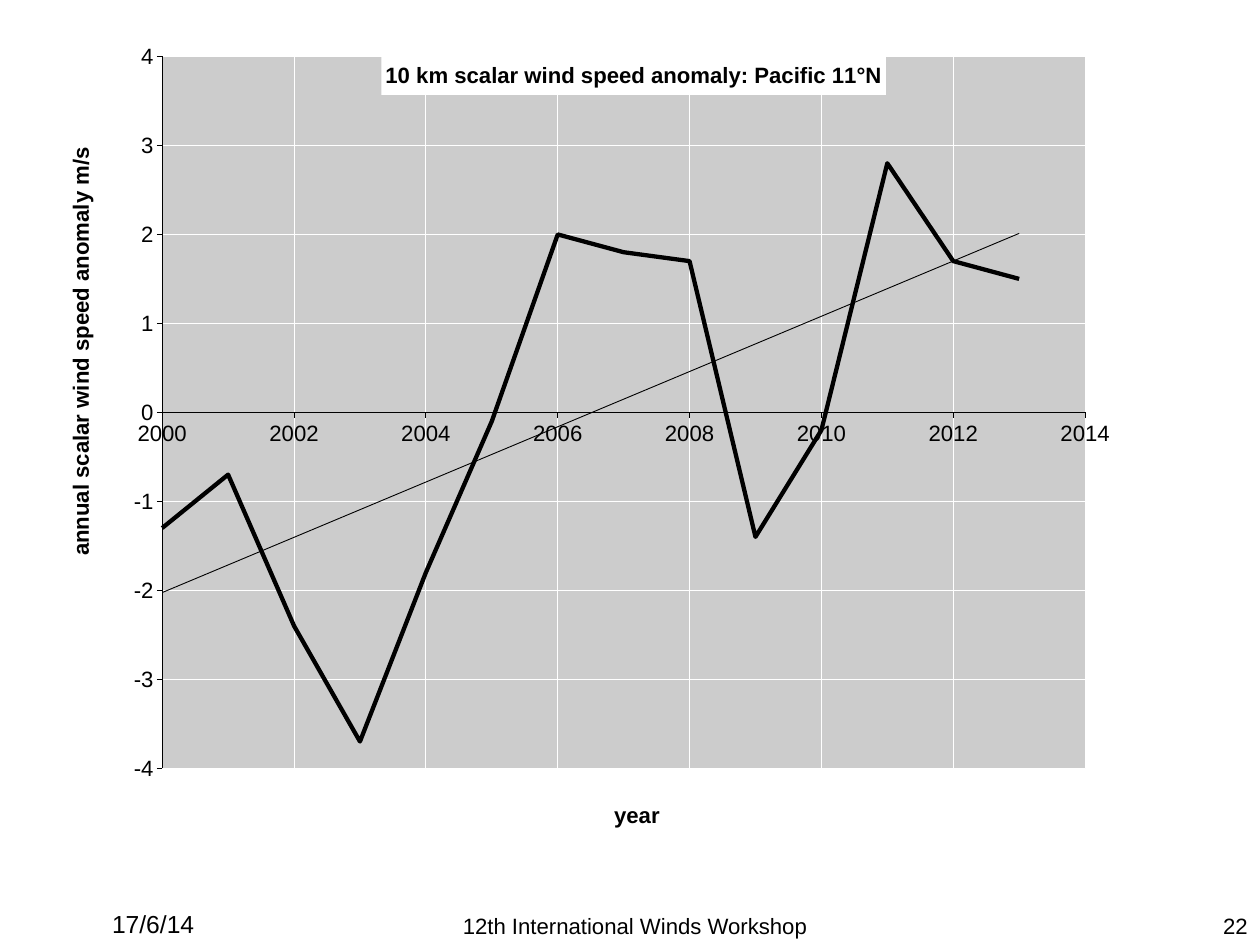
from collections import namedtuple

from lxml.etree import SubElement
from pptx import Presentation
from pptx.chart.data import XyChartData
from pptx.dml.color import RGBColor
from pptx.enum.chart import XL_CHART_TYPE, XL_TICK_LABEL_POSITION, XL_TICK_MARK
from pptx.enum.text import MSO_ANCHOR, PP_ALIGN
from pptx.oxml import parse_xml
from pptx.oxml.ns import nsdecls, qn
from pptx.util import Pt

Theme = namedtuple("Theme", "font ink paper panel date_size text_size thin thick")
theme = Theme("Arial", RGBColor(0, 0, 0), RGBColor(255, 255, 255), RGBColor(204, 204, 204),
              Pt(20), Pt(18), Pt(0.75), Pt(3.5))


def style_font(font, size, bold=False):
    font.name = theme.font
    font.size = size
    font.bold = bold
    font.color.rgb = theme.ink


def set_layout(element, **settings):
    layout = element.find(qn("c:layout"))
    if layout is None:
        layout = parse_xml(f"<c:layout {nsdecls('c')}/>")
        element.insert(0, layout)
    manual = SubElement(layout, qn("c:manualLayout"))
    for name, value in settings.items():
        SubElement(manual, qn(f"c:{name}")).set("val", str(value))


deck = Presentation()
deck.slide_width = Pt(1024)
deck.slide_height = Pt(768)
page = deck.slides.add_slide(deck.slide_layouts[6])

footers = [
    ("17/6/14", 18, 213, theme.date_size, PP_ALIGN.CENTER),
    ("12th International Winds Workshop", 354, 324, theme.text_size, PP_ALIGN.CENTER),
    ("22", 811, 213, theme.text_size, PP_ALIGN.RIGHT),
]
for text, left, width, size, alignment in footers:
    box = page.shapes.add_textbox(Pt(left), Pt(717), Pt(width), Pt(51))
    frame = box.text_frame
    frame.word_wrap = True
    frame.vertical_anchor = MSO_ANCHOR.BOTTOM
    frame.margin_left = frame.margin_right = Pt(10)
    frame.margin_top = frame.margin_bottom = Pt(5)
    frame.text = text
    para = frame.paragraphs[0]
    para.alignment = alignment
    style_font(para.runs[0].font, size)

anomalies = [-1.3, -0.7, -2.4, -3.7, -1.8, -0.1, 2, 1.8, 1.7, -1.4, -0.2, 2.8, 1.7, 1.5]
wind_data = XyChartData()
wind_series = wind_data.add_series("Series 1")
for year, anomaly in enumerate(anomalies, start=2000):
    wind_series.add_data_point(year, anomaly)

chart = page.shapes.add_chart(XL_CHART_TYPE.XY_SCATTER_SMOOTH_NO_MARKERS,
                              Pt(36), Pt(21), Pt(958), Pt(692), wind_data).chart
chart.has_legend = False
style_font(chart.font, theme.text_size)
chart.plots[0].vary_by_categories = False

series = chart.plots[0].series[0]
series.smooth = True
series.format.line.color.rgb = theme.ink
series.format.line.width = theme.thick
trend = parse_xml(
    f'<c:trendline {nsdecls("c", "a")}><c:spPr><a:ln w="{theme.thin}"><a:solidFill>'
    f'<a:srgbClr val="{theme.ink}"/></a:solidFill></a:ln></c:spPr>'
    '<c:trendlineType val="linear"/><c:dispRSqr val="0"/><c:dispEq val="0"/></c:trendline>')
series._element.find(qn("c:xVal")).addprevious(trend)

plot_area = chart._chartSpace.find(".//" + qn("c:plotArea"))
set_layout(plot_area, layoutTarget="inner", xMode="edge", yMode="edge",
           x=0.1, y=0.036, w=0.783, h=0.836)
plot_area.append(parse_xml(
    f'<c:spPr {nsdecls("c", "a")}><a:solidFill><a:srgbClr val="{theme.panel}"/></a:solidFill>'
    '<a:ln><a:noFill/></a:ln></c:spPr>'))

year_axis, speed_axis = chart.category_axis, chart.value_axis
for axis, low, high, step in [(year_axis, 2000, 2014, 2), (speed_axis, -4, 4, 1)]:
    axis.minimum_scale = low
    axis.maximum_scale = high
    axis.major_unit = step
    axis.major_tick_mark = XL_TICK_MARK.OUTSIDE
    axis.minor_tick_mark = XL_TICK_MARK.NONE
    axis.tick_label_position = XL_TICK_LABEL_POSITION.NEXT_TO_AXIS
    axis.tick_labels.number_format = "0"
    axis.tick_labels.number_format_is_linked = False
    style_font(axis.tick_labels.font, theme.text_size)
    axis.has_major_gridlines = True
    for line, color in [(axis.format.line, theme.ink),
                        (axis.major_gridlines.format.line, theme.paper)]:
        line.color.rgb = color
        line.width = theme.thin

titles = [
    (chart.chart_title, "10 km scalar wind speed anomaly: Pacific 11°N", 0.286, 0.036),
    (year_axis.axis_title, "year", 0.48, 0.905),
    (speed_axis.axis_title, "annual scalar wind speed anomaly m/s", 0.015, 0.138),
]
for title, text, left, top in titles:
    title.text_frame.text = text
    style_font(title.text_frame.paragraphs[0].runs[0].font, theme.text_size, bold=True)
    set_layout(title._element, xMode="edge", yMode="edge", x=left, y=top)

chart.chart_title.format.fill.solid()
chart.chart_title.format.fill.fore_color.rgb = theme.paper
chart.chart_title._element.find(qn("c:overlay")).set("val", "1")
turned = speed_axis.axis_title.text_frame._txBody.find(qn("a:bodyPr"))
turned.set("rot", "-5400000")
turned.set("vert", "horz")

deck.save("out.pptx")
